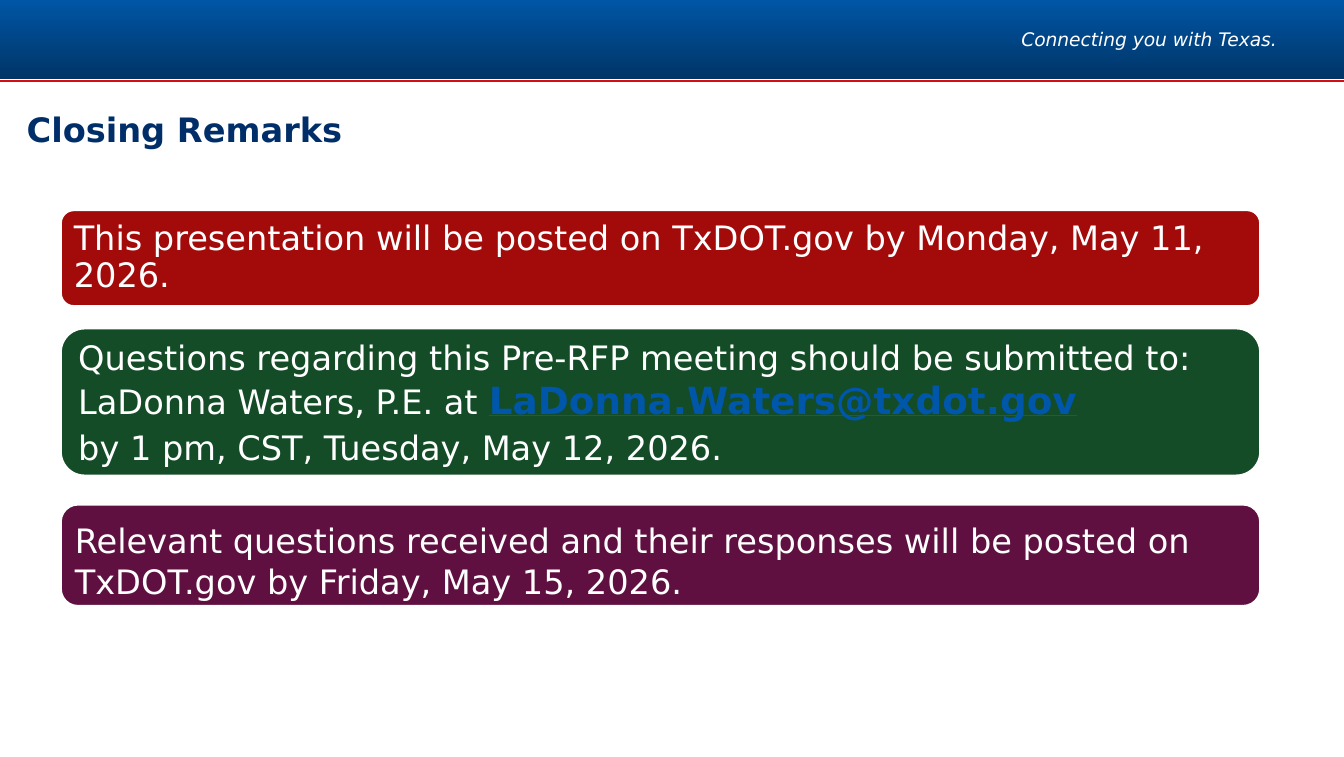
from lxml.etree import SubElement
from pptx import Presentation
from pptx.dml.color import RGBColor
from pptx.enum.shapes import MSO_CONNECTOR as Connector, MSO_SHAPE as Shape
from pptx.enum.text import MSO_ANCHOR as Anchor, PP_ALIGN as Align
from pptx.oxml.ns import qn
from pptx.util import Pt

PX = 9144
WIDTH, HEIGHT = 1000, 563
WHITE, NAVY, LINK = "FFFFFF", "002E69", "0056A9"


def px(*lengths):
    return [length * PX for length in lengths]


def color(value):
    return RGBColor.from_string(value)


class RemarksSlide:
    """Holds the text style and the current slide, and draws its elements."""

    font_name = "DejaVu Sans"

    def __init__(self, slide):
        self.slide = slide

    def add_text(self, frame, paragraphs, size=18, ink=WHITE, align=Align.LEFT,
                 spacing=None, **style):
        for index, runs in enumerate(paragraphs):
            paragraph = frame.add_paragraph() if index else frame.paragraphs[0]
            paragraph.alignment = align
            if spacing:
                paragraph.line_spacing = spacing
            for words, changes in runs:
                run = paragraph.add_run()
                run.text = words
                look = {"size": size, "ink": ink, **style, **changes}
                run.font.name = self.font_name
                run.font.size = Pt(look.pop("size"))
                run.font.color.rgb = color(look.pop("ink"))
                for name, value in look.items():
                    setattr(run.font, name, value)
        return paragraph

    def set_frame(self, frame, anchor, left, top, right, bottom):
        frame.word_wrap = True
        frame.vertical_anchor = anchor
        frame.margin_left, frame.margin_top = px(left, top)
        frame.margin_right, frame.margin_bottom = px(right, bottom)

    def label(self, box, words, anchor=Anchor.MIDDLE, margins=(0, 0, 0, 0), **style):
        frame = self.slide.shapes.add_textbox(*px(*box)).text_frame
        self.set_frame(frame, anchor, *margins)
        self.add_text(frame, [[(words, {})]], **style)

    def banner(self, box, top_color, bottom_color):
        band = self.slide.shapes.add_shape(Shape.RECTANGLE, *px(*box))
        band.shadow.inherit = False
        band.line.fill.background()
        band.fill.gradient()
        band.fill.gradient_angle = 270
        for stop, shade in zip(band.fill.gradient_stops, (top_color, bottom_color)):
            stop.color.rgb = color(shade)

    def rule(self, start, end, ink):
        line = self.slide.shapes.add_connector(Connector.STRAIGHT, *px(*start, *end))
        line.line.color.rgb = color(ink)
        line.line.width = Pt(1)
        SubElement(line._element.spPr, qn("a:effectLst"))

    def remark(self, top, height, radius, fill, paragraphs, margin, drop=0, **style):
        panel = self.slide.shapes.add_shape(
            Shape.ROUNDED_RECTANGLE, *px(45, top, 893, height))
        panel.adjustments[0] = radius / height
        panel.shadow.inherit = False
        panel.fill.solid()
        panel.fill.fore_color.rgb = color(fill)
        panel.line.color.rgb = color(WHITE)
        panel.line.width = Pt(1.5)
        self.set_frame(panel.text_frame, Anchor.MIDDLE, margin, drop, margin, 0)
        return self.add_text(panel.text_frame, paragraphs, **style)


def main():
    deck = Presentation()
    deck.slide_width, deck.slide_height = px(WIDTH, HEIGHT)
    closing = RemarksSlide(deck.slides.add_slide(deck.slide_layouts[6]))

    closing.banner((-1, -3, 1002, 62), "0057A8", "003567")
    closing.rule((-1, 60), (1001, 60), "D90D0D")
    closing.label((717, 0, 233, 60), "Connecting you with Texas.", size=10,
                  align=Align.RIGHT, spacing=0.9, italic=True)
    closing.label((10, 76, 502, 40), "Closing Remarks", anchor=Anchor.TOP,
                  margins=(10, 5, 10, 5), ink=NAVY, bold=True)

    closing.remark(156, 72, 10, "A30A0A", [
        [("This presentation will be posted on TxDOT.gov by Monday, May 11, 2026.", {})],
    ], margin=7, spacing=0.9)

    email_style = {"size": 20, "ink": LINK, "bold": True, "underline": True}
    deadline = closing.remark(244, 110, 18, "134C26", [
        [("Questions regarding this Pre-RFP meeting should be submitted to:", {})],
        [("LaDonna Waters, P.E. at ", {}), ("LaDonna.Waters@txdot.gov", email_style)],
        [("by 1 pm, CST, Tuesday, May 12, 2026.", {})],
    ], margin=8)
    deadline.space_before = Pt(3)

    closing.remark(375, 76, 13, "5F0F40", [
        [("Relevant questions received and their responses will be posted on "
          "TxDOT.gov by Friday, May 15, 2026.", {})],
    ], margin=7, drop=8)

    deck.save("out.pptx")


if __name__ == "__main__":
    main()
